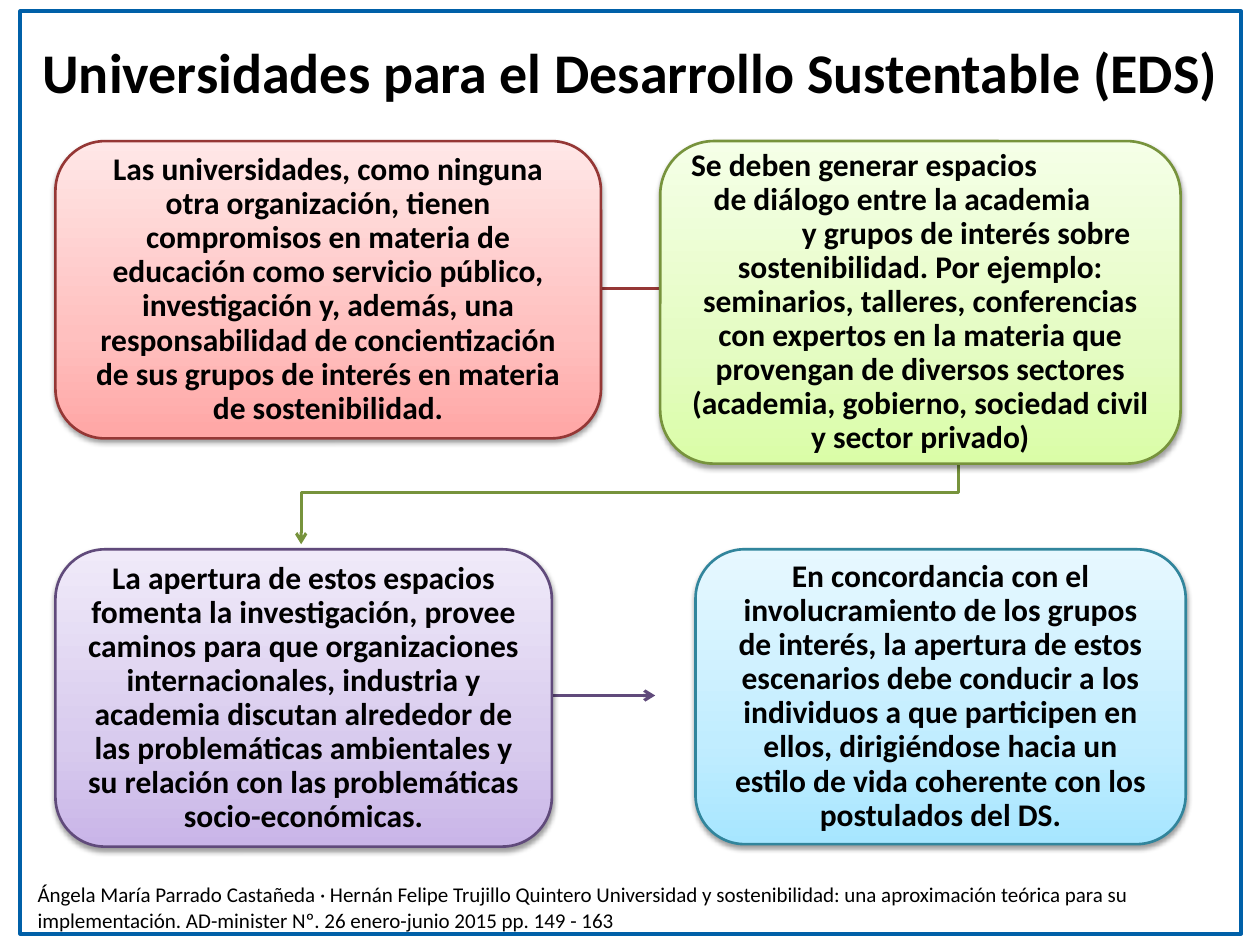
from lxml import etree
from pptx import Presentation
from pptx.dml.color import RGBColor
from pptx.enum.shapes import MSO_CONNECTOR, MSO_SHAPE
from pptx.enum.text import MSO_ANCHOR, PP_ALIGN
from pptx.oxml.ns import qn
from pptx.util import Inches, Pt

LEFT, CENTER = PP_ALIGN.LEFT, PP_ALIGN.CENTER
TOP, MIDDLE = MSO_ANCHOR.TOP, MSO_ANCHOR.MIDDLE
ROUNDED, RECTANGLE = MSO_SHAPE.ROUNDED_RECTANGLE, MSO_SHAPE.RECTANGLE
STRAIGHT = MSO_CONNECTOR.STRAIGHT

COLORS = {
    "text": "000000", "frame": "0060A8",
    "red": "953735", "green": "77933C", "purple": "604A7B", "teal": "31859C",
}
GRADIENTS = {
    "red": ("FFA6A5", "FFC0BF", "FFE7E7"),
    "green": ("DAFDA7", "E4FCC2", "F5FFE7"),
    "purple": ("C9B5E8", "D8CBEE", "F0EAF9"),
    "teal": ("A7E6FF", "C1EDFF", "E7F8FF"),
}
STOPS = (0, 35000, 100000)

# color, left, top, width, height, lines as (text, alignment, left and right indent)
STEPS = [
    ("red", 0.44, 1.12, 4.33, 2.36, [
        ("Las universidades, como ninguna otra organización, tienen compromisos en "
         "materia de educación como servicio público, investigación y, además, una "
         "responsabilidad de concientización de sus grupos de interés en materia de "
         "sostenibilidad.", CENTER, 0, 0)]),
    ("green", 5.24, 1.12, 4.13, 2.56, [
        ("Se deben generar espacios", LEFT, 0, 0),
        ("de diálogo entre la academia", CENTER, 0, 0.29),
        ("y grupos de interés sobre", CENTER, 0.73, 0),
        ("sostenibilidad. Por ejemplo: seminarios, talleres, conferencias con expertos "
         "en la materia que provengan de diversos sectores (academia, gobierno, "
         "sociedad civil y sector privado)", CENTER, 0, 0)]),
    ("purple", 0.44, 4.36, 3.94, 2.36, [
        ("La apertura de estos espacios fomenta la investigación, provee caminos para "
         "que organizaciones internacionales, industria y academia discutan alrededor "
         "de las problemáticas ambientales y su relación con las problemáticas "
         "socio-económicas.", CENTER, 0, 0)]),
    ("teal", 5.52, 4.36, 3.89, 2.34, [
        ("En concordancia con el involucramiento de los grupos de interés, la apertura "
         "de estos escenarios debe conducir a los individuos a que participen en "
         "ellos, dirigiéndose hacia un estilo de vida coherente con los postulados "
         "del DS.", CENTER, 0, 0)]),
]


def child(parent, tag, **attributes):
    """Append a DrawingML element and return it."""
    element = etree.SubElement(parent, qn("a:" + tag))
    for name, value in attributes.items():
        element.set(name, str(value))
    return element


def write(para, text, size, bold=False, align=LEFT, indent=(0, 0), spacing=1.0):
    para.alignment = align
    para.line_spacing = spacing
    properties = para._p.get_or_add_pPr()
    for name, length in zip(("marL", "marR"), indent):
        properties.set(name, str(Inches(length)))
    span = para.add_run()
    span.text = text
    span.font.name = "Calibri"
    span.font.size = Pt(size)
    span.font.bold = bold
    span.font.color.rgb = RGBColor.from_string(COLORS["text"])


class Slide:
    def __init__(self, page):
        self.shapes = page.shapes

    def outline(self, shape, color, width):
        shape.line.color.rgb = RGBColor.from_string(COLORS[color])
        shape.line.width = Pt(width)

    def label(self, left, top, width, height, text, anchor=TOP, **style):
        box = self.shapes.add_textbox(*map(Inches, (left, top, width, height)))
        box.text_frame.word_wrap = True
        box.text_frame.vertical_anchor = anchor
        write(box.text_frame.paragraphs[0], text, **style)

    def frame(self, left, top, width, height):
        border = self.shapes.add_shape(RECTANGLE, *map(Inches, (left, top, width, height)))
        border.shadow.inherit = False
        border.fill.background()
        self.outline(border, "frame", 2.25)

    def step(self, color, left, top, width, height, lines):
        box = self.shapes.add_shape(ROUNDED, *map(Inches, (left, top, width, height)))
        self.outline(box, color, 1.5)
        self.shade(box, GRADIENTS[color])
        self.drop_shadow(box)
        frame = box.text_frame
        frame.word_wrap = True
        frame.vertical_anchor = MIDDLE
        frame.margin_left = frame.margin_right = Inches(0.12)
        frame.margin_top = frame.margin_bottom = Inches(0.12)
        for number, (text, align, before, after) in enumerate(lines):
            para = frame.add_paragraph() if number else frame.paragraphs[0]
            write(para, text, size=18, bold=True, align=align,
                  indent=(before, after), spacing=0.9)

    def shade(self, box, colors):
        """Fill with three stops that run from the bottom up."""
        box.fill.gradient()
        gradient = box._element.spPr.find(qn("a:gradFill"))
        for part in list(gradient):
            gradient.remove(part)
        stops = child(gradient, "gsLst")
        for position, color in zip(STOPS, colors):
            child(child(stops, "gs", pos=position), "srgbClr", val=color)
        child(gradient, "lin", ang=270 * 60000, scaled=0)

    def drop_shadow(self, box):
        box.shadow.inherit = False
        effects = box._element.spPr.find(qn("a:effectLst"))
        shadow = child(effects, "outerShdw", blurRad=Pt(3.1), dist=Pt(1.6),
                       dir=90 * 60000, rotWithShape=0)
        child(child(shadow, "srgbClr", val="000000"), "alpha", val=38000)

    def arrow(self, color, width, points):
        """Draw a straight arrow for two points, a bent one for more."""
        corners = [(Inches(x), Inches(y)) for x, y in points]
        if len(corners) == 2:
            line = self.shapes.add_connector(STRAIGHT, *corners[0], *corners[1])
            self.outline(line, color, width)
            child(line._element.spPr, "effectLst")
        else:
            builder = self.shapes.build_freeform(*corners[0])
            builder.add_line_segments(corners[1:], close=False)
            line = builder.convert_to_shape()
            line.fill.background()
            line.shadow.inherit = False
            self.outline(line, color, width)
        child(line.line._get_or_add_ln(), "tailEnd", type="arrow")


def main():
    deck = Presentation()
    deck.slide_width, deck.slide_height = Inches(10), Inches(7.5)
    slide = Slide(deck.slides.add_slide(deck.slide_layouts[6]))
    slide.label(0.16, 0.13, 9.69, 0.87, "Universidades para el Desarrollo Sustentable (EDS)",
                anchor=MIDDLE, size=32, bold=True, align=CENTER)
    slide.frame(0.16, 0.09, 9.69, 7.32)
    slide.arrow("red", 1.5, [(4.77, 2.29), (5.63, 2.29)])
    slide.arrow("green", 1.75, [(7.61, 3.46), (7.61, 3.91), (2.39, 3.91), (2.39, 4.32)])
    slide.arrow("purple", 1.75, [(4.33, 5.52), (5.2, 5.52)])
    for step in STEPS:
        slide.step(*step)
    slide.label(0.2, 6.95, 9.69, 0.5,
                "Ángela María Parrado Castañeda · Hernán Felipe Trujillo Quintero "
                "Universidad y sostenibilidad: una aproximación teórica para su "
                "implementación. AD-minister Nº. 26 enero-junio 2015 pp. 149 - 163", size=12)
    deck.save("out.pptx")


if __name__ == "__main__":
    main()
